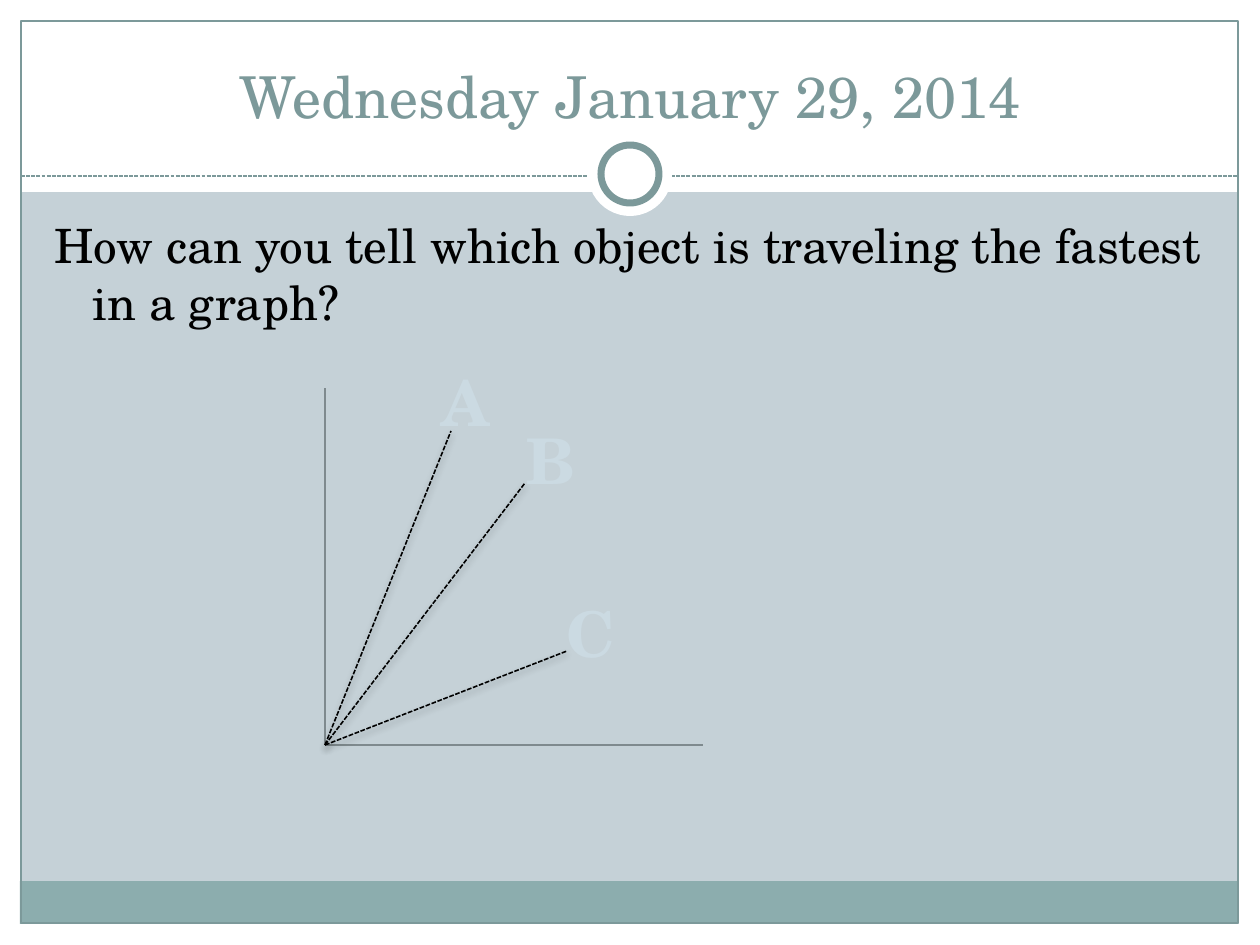
from lxml import etree
from pptx import Presentation
from pptx.dml.color import RGBColor
from pptx.enum.dml import MSO_LINE
from pptx.enum.shapes import MSO_CONNECTOR, MSO_SHAPE
from pptx.enum.text import MSO_ANCHOR, PP_ALIGN
from pptx.oxml.ns import qn
from pptx.util import Pt

RECTANGLE, OVAL = MSO_SHAPE.RECTANGLE, MSO_SHAPE.OVAL
STRAIGHT = MSO_CONNECTOR.STRAIGHT
DASH = MSO_LINE.SQUARE_DOT
CENTER, LEFT = PP_ALIGN.CENTER, PP_ALIGN.LEFT
TOP, BOTTOM = MSO_ANCHOR.TOP, MSO_ANCHOR.BOTTOM
PX = 914400 / 126
FONT = "TeX Gyre Schola"
COLORS = {
    "background": "C5D1D7", "white": "FFFFFF", "footer": "8CADAE",
    "frame": "7C999A", "axis": "7F8A8E", "ink": "000000", "label": "CBDAE2",
}


def add_line(start, end, color, width, dash=None):
    ends = [round(value * PX) for value in (*start, *end)]
    line = page.shapes.add_connector(STRAIGHT, *ends)
    line.line.color.rgb = RGBColor.from_string(COLORS[color])
    line.line.width = Pt(width)
    if dash:
        line.line.dash_style = dash
    return etree.SubElement(line._element.spPr, qn("a:effectLst"))


def write_text(box, bounds, text, size, color, align, anchor, bold=False):
    box.left, box.top, box.width, box.height = [round(value * PX) for value in bounds]
    frame = box.text_frame
    frame.word_wrap = True
    frame.vertical_anchor = anchor
    para = frame.paragraphs[0]
    para.alignment = align
    span = para.add_run()
    span.text = text
    span.font.name = FONT
    span.font.size = Pt(size)
    span.font.bold = bold
    span.font.color.rgb = RGBColor.from_string(COLORS[color])
    return para


deck = Presentation()
deck.slide_width = round(1260 * PX)
deck.slide_height = round(945 * PX)
page = deck.slides.add_slide(deck.slide_layouts[5])
page.background.fill.solid()
page.background.fill.fore_color.rgb = RGBColor.from_string(COLORS["background"])

decorations = [
    (RECTANGLE, (0, 924, 1260, 21), "white", 0),
    (RECTANGLE, (0, 0, 1260, 192), "white", 0),
    (RECTANGLE, (0, 0, 21, 945), "white", 0),
    (RECTANGLE, (1239, 0, 21, 945), "white", 0),
    (RECTANGLE, (20, 881, 1218, 43), "footer", 0),
    (RECTANGLE, (21, 21, 1217, 902), None, 0.75),
    (OVAL, (588, 132, 84, 84), "white", 0),
    (OVAL, (601, 145, 58, 58), "white", 4),
]
for kind, bounds, fill, line_width in decorations:
    if kind == OVAL and not line_width:
        add_line((21, 176), (1239, 176), "frame", 0.75, DASH)
    shape = page.shapes.add_shape(kind, *[round(value * PX) for value in bounds])
    shape.shadow.inherit = False
    if fill:
        shape.fill.solid()
        shape.fill.fore_color.rgb = RGBColor.from_string(COLORS[fill])
    else:
        shape.fill.background()
    if line_width:
        shape.line.color.rgb = RGBColor.from_string(COLORS["frame"])
        shape.line.width = Pt(line_width)
    else:
        shape.line.fill.background()

title = page.shapes.title
page.shapes._spTree.append(title._element)
write_text(title, (42, 31, 1176, 105), "Wednesday January 29, 2014",
           33, "frame", CENTER, BOTTOM)

question = write_text(page.shapes.add_textbox(0, 0, 0, 0), (42, 210, 1172, 630),
                      "How can you tell which object is traveling the fastest in a graph?",
                      27, "ink", LEFT, TOP)
question.space_before = Pt(5.4)
indent = round(38 * PX)
question._p.get_or_add_pPr().set("marL", str(indent))
question._p.get_or_add_pPr().set("indent", str(-indent))

origin = (325, 745)
for axis_end in [(325, 388), (703, 745)]:
    add_line(origin, axis_end, "axis", 0.75)

rays = [
    ("A", (451, 431), (420, 357)),
    ("B", (525, 483), (506, 415)),
    ("C", (567, 651), (546, 588)),
]
for letter, ray_end, corner in rays:
    effects = add_line(origin, ray_end, "ink", 0.9, DASH)
    shadow = etree.SubElement(effects, qn("a:outerShdw"), blurRad=str(Pt(4)),
                              dist=str(Pt(2)), dir="5400000", rotWithShape="0")
    tint = etree.SubElement(shadow, qn("a:srgbClr"), val=COLORS["ink"])
    etree.SubElement(tint, qn("a:alpha"), val="35000")
    write_text(page.shapes.add_textbox(0, 0, 0, 0), (*corner, 90, 89), letter,
               36, "label", CENTER, TOP, True)

deck.save("out.pptx")
